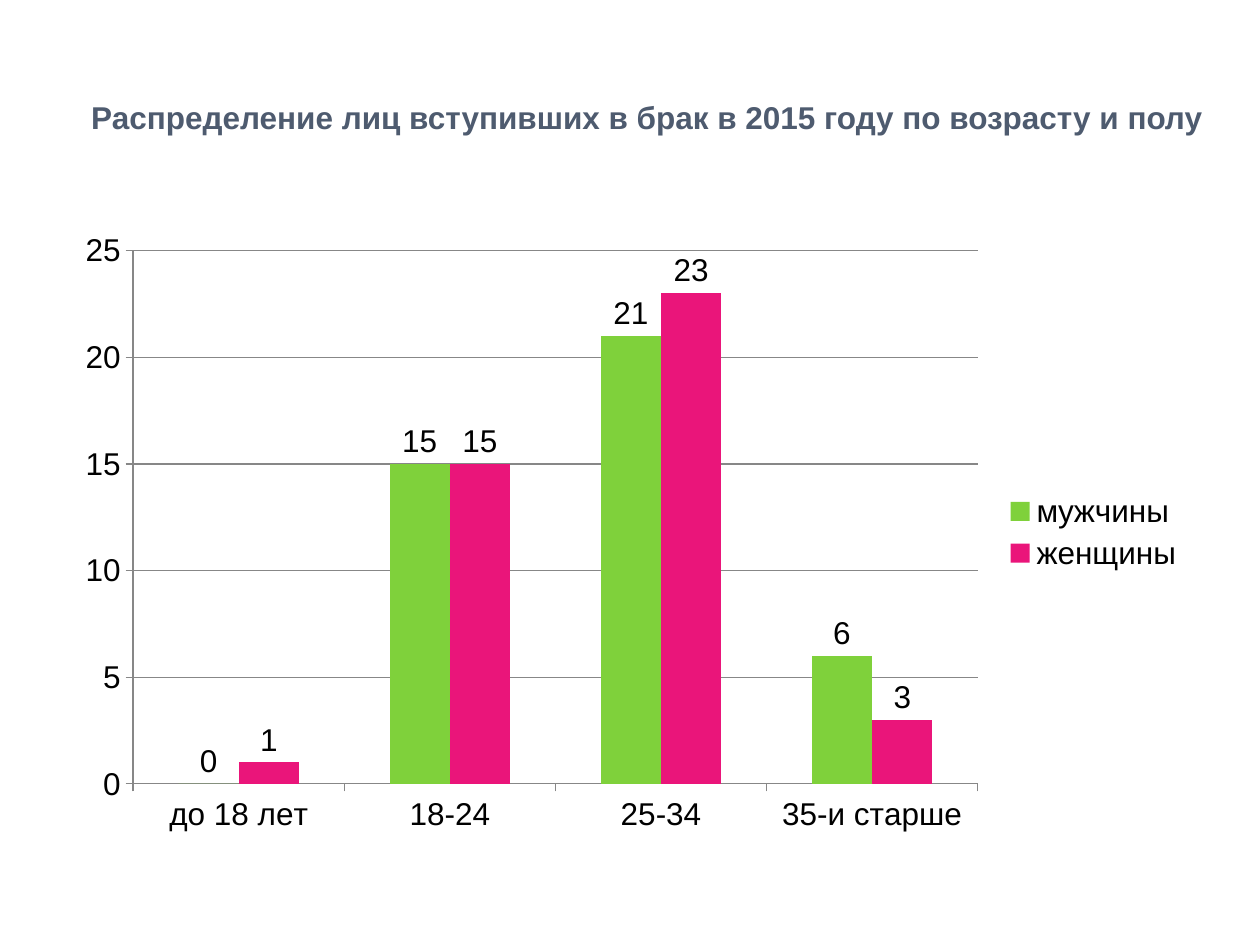
from pptx import Presentation
from pptx import util as u
from pptx.chart.data import CategoryChartData
from pptx.dml.color import RGBColor
from pptx.enum import chart as ch, text

FONT = "Arial"
CATEGORIES = ["до 18 лет", "18-24", "25-34", "35-и старше"]
SERIES = [("мужчины", [0, 15, 21, 6], "7FD13B"),
          ("женщины", [1, 15, 23, 3], "EA157A")]


def paint(color, value):
    """Set a colour format from a hex string."""
    color.rgb = RGBColor.from_string(value)


def style_font(font, value, bold=False):
    """Apply the slide's typeface and size with the given colour."""
    font.name, font.size, font.bold = FONT, u.Pt(18), bold
    paint(font.color, value)


def add_title(s, x, y, w, h):
    """Place the heading in the title placeholder."""
    sp = s.shapes.title
    sp.left, sp.top, sp.width, sp.height = map(u.Inches, (x, y, w, h))
    tf = sp.text_frame
    tf.word_wrap = True
    tf.vertical_anchor = text.MSO_ANCHOR.MIDDLE
    p = tf.paragraphs[0]
    p.alignment = text.PP_ALIGN.CENTER
    r = p.add_run()
    r.text = "Распределение лиц вступивших в брак в 2015 году по возрасту и полу"
    style_font(r.font, "4E5B6F", True)


def style_axis(axis):
    """Give an axis a thin grey line and outside ticks."""
    axis.major_tick_mark = ch.XL_TICK_MARK.OUTSIDE
    axis.minor_tick_mark = ch.XL_TICK_MARK.NONE
    axis.format.line.width = u.Pt(0.75)
    paint(axis.format.line.color, "878787")


def add_age_chart(s, x, y, w, h):
    """Place the column chart of marriages by age and sex."""
    data = CategoryChartData(number_format="General")
    data.categories = CATEGORIES
    for name, values, _ in SERIES:
        data.add_series(name, values)
    chart = s.shapes.add_chart(ch.XL_CHART_TYPE.COLUMN_CLUSTERED,
                               *map(u.Inches, (x, y, w, h)), data).chart
    style_font(chart.font, "000000")
    chart.has_title = False
    chart.has_legend = True
    chart.legend.position = ch.XL_LEGEND_POSITION.RIGHT
    chart.legend.include_in_layout = False

    style_axis(chart.category_axis)
    axis = chart.value_axis
    style_axis(axis)
    axis.minimum_scale, axis.maximum_scale, axis.major_unit = 0, 25, 5
    axis.has_major_gridlines = True
    grid = axis.major_gridlines.format.line
    grid.width = u.Pt(0.75)
    paint(grid.color, "878787")

    plot = chart.plots[0]
    plot.gap_width, plot.overlap = 150, 0
    plot.vary_by_categories = False
    for series, (_, _, color) in zip(plot.series, SERIES):
        series.format.fill.solid()
        paint(series.format.fill.fore_color, color)
        labels = series.data_labels
        labels.show_value = True
        labels.position = ch.XL_LABEL_POSITION.OUTSIDE_END
        style_font(labels.font, "000000")


def main():
    """Build and save the slide."""
    prs = Presentation()
    prs.slide_width, prs.slide_height = u.Inches(10), u.Inches(7.5)
    s = prs.slides.add_slide(prs.slide_layouts[5])
    add_title(s, 0.5, 0.3, 9.27, 1.25)
    add_age_chart(s, 0.5, 1.75, 9, 4.95)
    prs.save("out.pptx")


if __name__ == "__main__":
    main()
